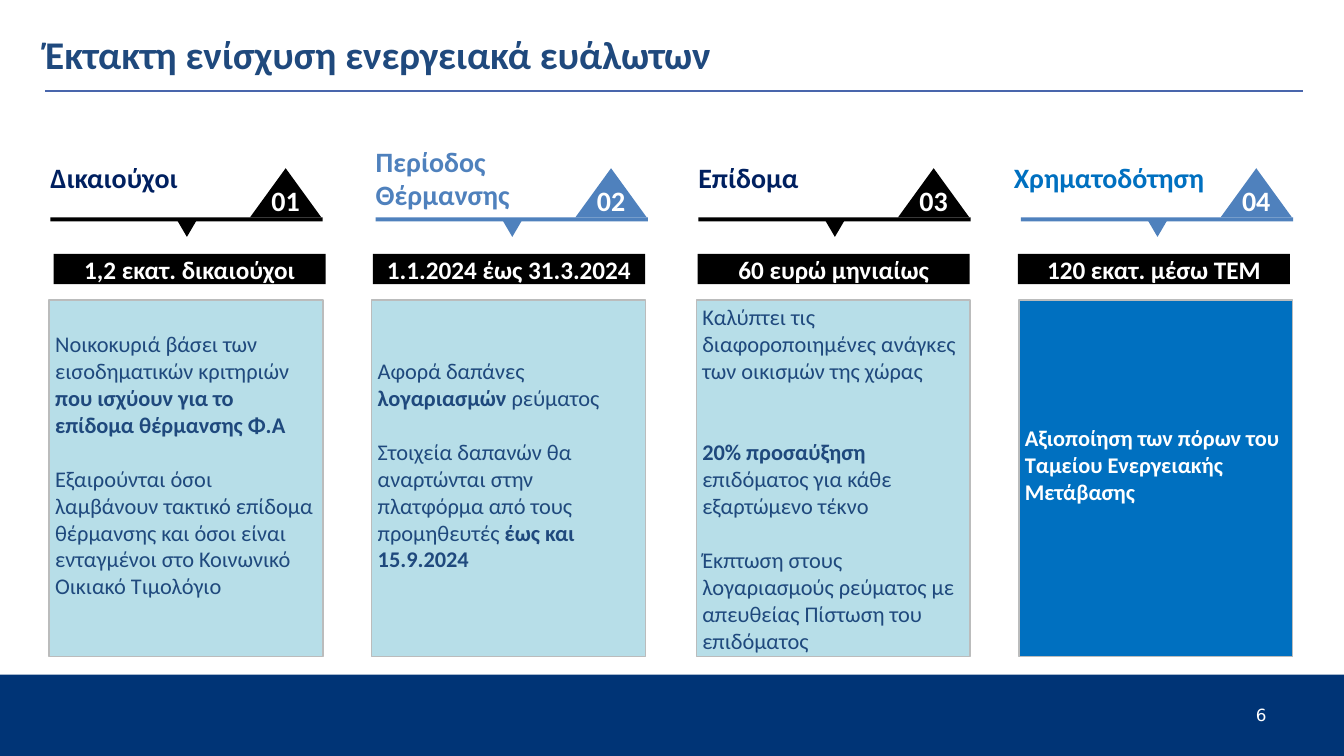
import pptx
import pptx.util
import pptx.dml.color
import pptx.enum.shapes
import pptx.enum.text
import pptx.oxml.ns
import lxml.etree

Cm, Pt = pptx.util.Cm, pptx.util.Pt
KIND = pptx.enum.shapes.MSO_SHAPE
SIDE = pptx.enum.text.PP_ALIGN
HOLD = pptx.enum.text.MSO_ANCHOR

HUES = {
    "navy": "002060", "blue": "4F81BD", "vivid": "0070C0", "ink": "1F497D",
    "pale": "B7DEE8", "edge": "BBBCBC", "band": "003476", "rule": "4966AC",
    "black": "000000", "white": "FFFFFF",
}
TITLE = "Έκτακτη ενίσχυση ενεργειακά ευάλωτων"
PAGE = "6"

# Each paragraph is (empty lines above, [(text, bold), ...]).
COLS = [
    {"name": "Δικαιούχοι", "tint": "navy", "mark": "black",
     "fact": "1,2 εκατ. δικαιούχοι", "fill": "pale", "ink": "ink", "tail": 1,
     "body": [
         (0, [("Νοικοκυριά βάσει των εισοδηματικών κριτηριών ", False),
              ("που ισχύουν για το επίδομα θέρμανσης Φ.Α", True)]),
         (1, [("Εξαιρούνται όσοι λαμβάνουν τακτικό επίδομα θέρμανσης και όσοι "
               "είναι ενταγμένοι στο Κοινωνικό Οικιακό Τιμολόγιο", False)])]},
    {"name": "Περίοδος Θέρμανσης", "tint": "blue", "mark": "blue",
     "fact": "1.1.2024 έως 31.3.2024", "fill": "pale", "ink": "ink", "tail": 1,
     "body": [
         (0, [("Αφορά δαπάνες ", False), ("λογαριασμών", True),
              (" ρεύματος", False)]),
         (1, [("Στοιχεία δαπανών θα αναρτώνται στην πλατφόρμα από τους "
               "προμηθευτές ", False), ("έως και 15.9.2024", True)])]},
    {"name": "Επίδομα", "tint": "navy", "mark": "black",
     "fact": "60 ευρώ μηνιαίως", "fill": "pale", "ink": "ink", "tail": 0,
     "body": [
         (0, [("Καλύπτει τις διαφοροποιημένες ανάγκες των οικισμών της χώρας",
               False)]),
         (2, [("20% προσαύξηση", True),
              (" επιδόματος για κάθε εξαρτώμενο τέκνο", False)]),
         (1, [("Έκπτωση στους λογαριασμούς ρεύματος με απευθείας Πίστωση του "
               "επιδόματος", False)])]},
    {"name": "Χρηματοδότηση", "tint": "vivid", "mark": "blue",
     "fact": "120 εκατ. μέσω ΤΕΜ", "fill": "vivid", "ink": "white", "tail": 1,
     "body": [(0, [("Αξιοποίηση των πόρων του Ταμείου Ενεργειακής Μετάβασης",
                    True)])]},
]

# Left edges of each row of parts, in cm: name, rule, fact bar, card.
LEFTS = [(1.27, 1.27, 1.35, 1.24), (9.47, 9.47, 9.4, 9.37),
         (17.6, 17.6, 17.58, 17.55), (25.55, 25.73, 25.65, 25.68)]
WIDE = 6.86
LINE = 19.5  # height of one card line, in points

LOOKS = {
    "title": {"size": Pt(28), "bold": True, "name": "Calibri"},
    "head": {"size": Pt(20), "bold": True, "name": "Calibri"},
    "fact": {"size": Pt(18), "bold": True, "name": "Calibri"},
    "card": {"size": Pt(16), "name": "Calibri"},
    "page": {"size": Pt(12), "name": "DejaVu Sans"},
}


def tone(hue):
    return pptx.dml.color.RGBColor.from_string(HUES[hue])


def write(box, paras, look, hue, hold=HOLD.MIDDLE, side=SIDE.LEFT,
          pad=(0, 0, 0, 0)):
    frame = box.text_frame
    form = {"word_wrap": True, "vertical_anchor": hold,
            "auto_size": pptx.enum.text.MSO_AUTO_SIZE.NONE}
    edges = ("margin_left", "margin_top", "margin_right", "margin_bottom")
    form.update(zip(edges, map(Cm, pad)))
    for key, value in form.items():
        setattr(frame, key, value)
    for i, (gap, runs) in enumerate(paras):
        para = frame.add_paragraph() if i else frame.paragraphs[0]
        para.alignment = side
        if gap:
            para.space_before = Pt(gap * LINE)
        for text, bold in runs:
            run = para.add_run()
            run.text = text
            run.font.bold = bold
            for key, value in LOOKS[look].items():
                setattr(run.font, key, value)
            run.font.color.rgb = tone(hue)


def label(box, text, *args, **more):
    write(box, [(0, [(text, False)])], *args, **more)


def draw(kind, x, y, w, h, fill, edge=None):
    shape = slide.shapes.add_shape(kind, Cm(x), Cm(y), Cm(w), Cm(h))
    shape.shadow.inherit = False
    shape.fill.solid()
    shape.fill.fore_color.rgb = tone(fill)
    if edge:
        shape.line.color.rgb = tone(edge)
        shape.line.width = Pt(1)
    else:
        shape.line.fill.background()
    return shape


def place(x, y, w, h):
    return slide.shapes.add_textbox(Cm(x), Cm(y), Cm(w), Cm(h))


deck = pptx.Presentation()
deck.slide_width, deck.slide_height = Cm(33.87), Cm(19.05)
slide = deck.slides.add_slide(deck.slide_layouts[5])

title = slide.shapes.title
spot = {"left": 1.14, "top": 0.13, "width": 31.6, "height": 2.46}
for key, value in spot.items():
    setattr(title, key, Cm(value))
label(title, TITLE, "title", "ink")

draw(KIND.RECTANGLE, 0, 17, 33.87, 2.05, "band")
rule = slide.shapes.add_connector(pptx.enum.shapes.MSO_CONNECTOR.STRAIGHT,
                                  Cm(1.14), Cm(2.29), Cm(32.84), Cm(2.29))
rule.line.color.rgb = tone("rule")
rule.line.width = Pt(0.96)
lxml.etree.SubElement(rule._element.spPr, pptx.oxml.ns.qn("a:effectLst"))

for i, (col, (name, bar, fact, card)) in enumerate(zip(COLS, LEFTS), 1):
    mark = col["mark"]
    label(place(name, 3.63, 5.41, 1.7), col["name"], "head", col["tint"])
    peak = draw(KIND.ISOSCELES_TRIANGLE, bar + 5.03, 4.24, 1.8, 1.24, mark)
    label(peak, f"{i:02}", "head", "white", HOLD.BOTTOM, SIDE.CENTER)
    draw(KIND.RECTANGLE, bar, 5.48, WIDE, 0.1, mark)
    tip = draw(KIND.ISOSCELES_TRIANGLE, bar + 3.2, 5.56, 0.48, 0.41, mark)
    tip.rotation = 180
    strip = draw(KIND.RECTANGLE, fact, 6.4, WIDE, 0.76, "black")
    label(strip, col["fact"], "fact", "white", HOLD.TOP, SIDE.CENTER)
    panel = draw(KIND.RECTANGLE, card, 7.56, 6.9, 8.99, col["fill"], "edge")
    foot = 0.08 + col["tail"] * 0.69
    write(panel, col["body"], "card", col["ink"],
          pad=(0.15, 0.08, 0.15, foot))

page = place(31.55, 17.83, 1.17, 0.36)
label(page, PAGE, "page", "white", HOLD.TOP, pad=(0.1, 0, 0, 0))
page.text_frame.paragraphs[0].line_spacing = 0.87

deck.save("out.pptx")
